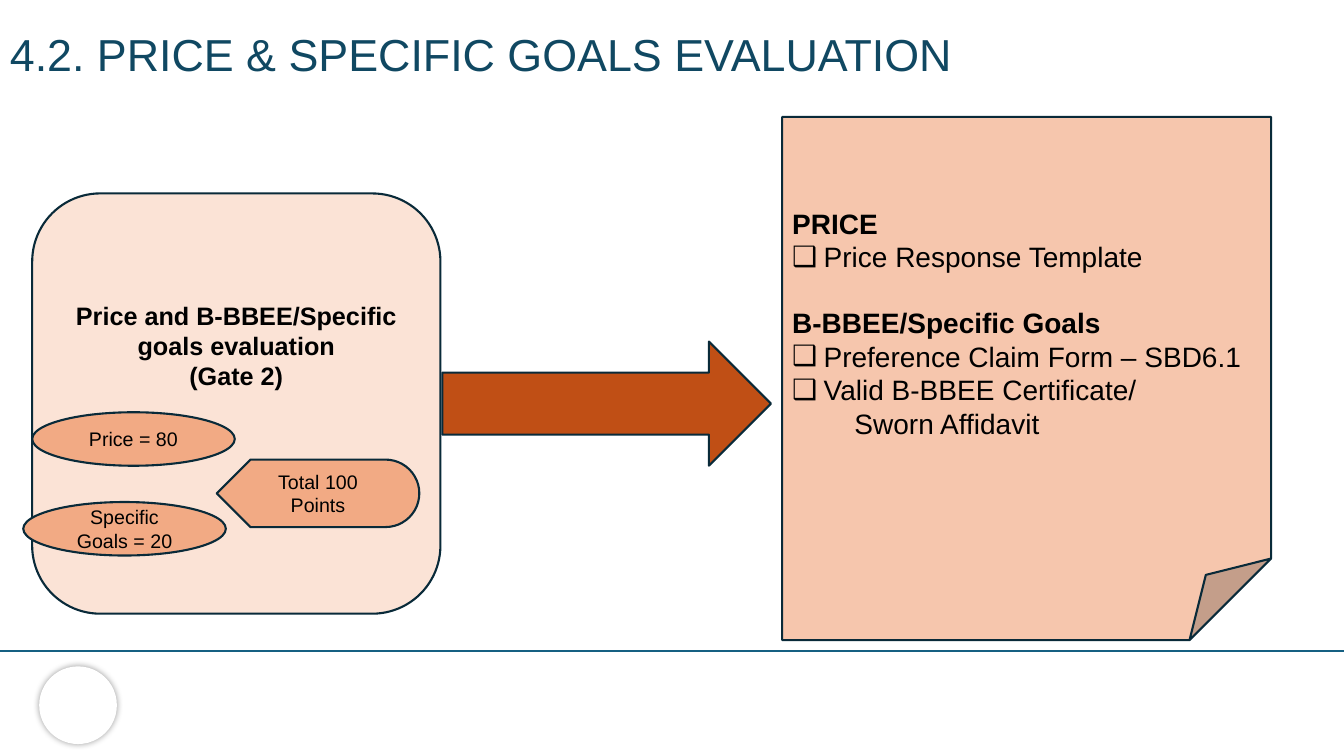
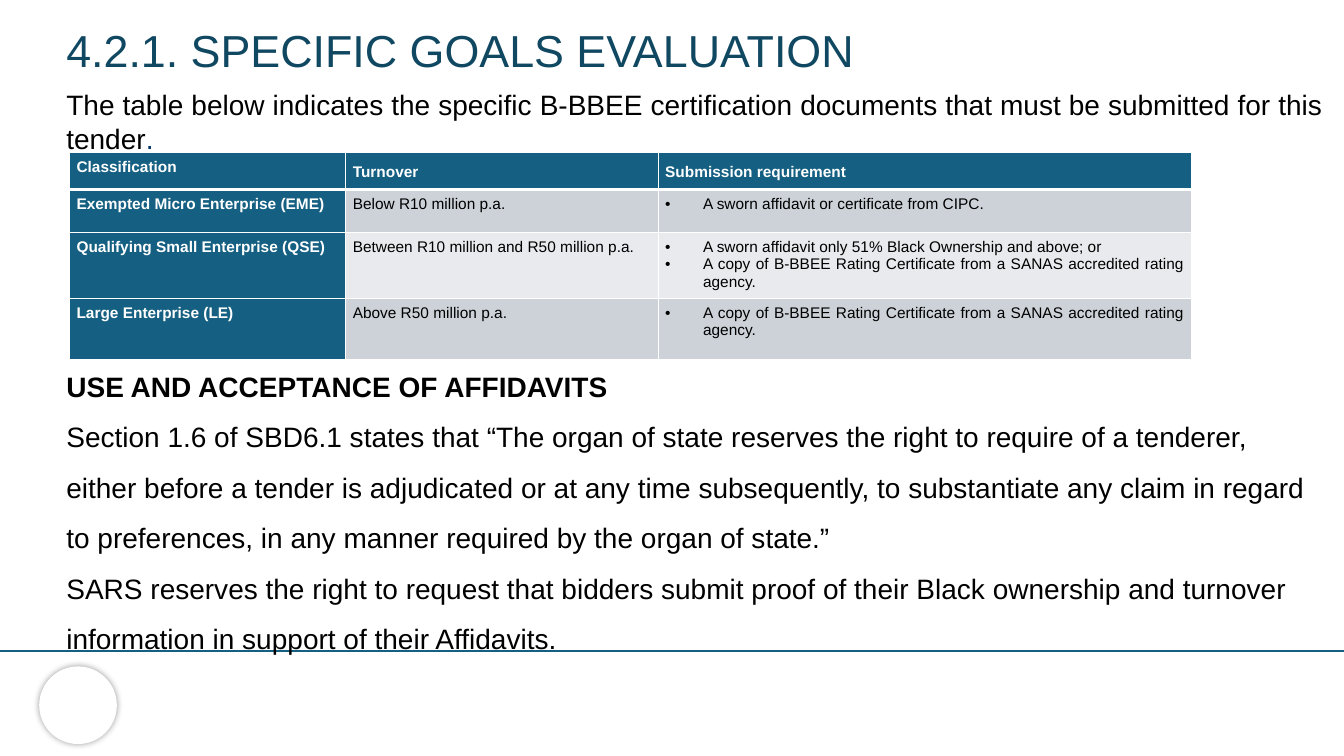
"""Build two slides on price and specific goals evaluation."""
from lxml import etree
from pptx import Presentation
from pptx.dml.color import RGBColor
from pptx.enum import shapes, text
from pptx.oxml import ns
from pptx.util import Pt

BLACK, WHITE = RGBColor(0, 0, 0), RGBColor(255, 255, 255)
TEAL, TITLE = RGBColor(0x15, 0x60, 0x82), RGBColor(0x10, 0x48, 0x62)
EDGE, NAVY = RGBColor(0x09, 0x2A, 0x39), RGBColor(0, 0x33, 0x66)
PALE, PEACH = RGBColor(0xFB, 0xE3, 0xD6), RGBColor(0xF6, 0xC6, 0xAD)
SALMON, RUST = RGBColor(0xF2, 0xAA, 0x84), RGBColor(0xC0, 0x4F, 0x15)
BANDS = RGBColor(0xCC, 0xD2, 0xD8), RGBColor(0xE8, 0xEA, 0xED)

KIND = shapes.MSO_SHAPE
MID, TOP = text.MSO_ANCHOR.MIDDLE, text.MSO_ANCHOR.TOP
LEFT, CENTER, JUSTIFY = text.PP_ALIGN.LEFT, text.PP_ALIGN.CENTER, text.PP_ALIGN.JUSTIFY
PAD = (7.2, 3.6, 7.2, 3.6)

BOX = dict(bullet="❑", left=22.5, hang=22.5)
DOT = dict(bullet="•", left=27, hang=27)
BOLD = dict(bold=True)

GATE = ["Price and B-BBEE/Specific goals evaluation", "(Gate 2)"]
NEEDS = [
    ("PRICE", BOLD),
    ("Price Response Template", BOX),
    ("B-BBEE/Specific Goals", dict(bold=True, before=23)),
    ("Preference Claim Form – SBD6.1", BOX),
    ("Valid B-BBEE Certificate/", BOX),
    ("Sworn Affidavit", dict(left=44.5)),
]
POINTS = [
    (KIND.OVAL, (23, 294.5, 144.7, 38.2), ["Price = 80"]),
    (KIND.OVAL, (16.6, 358.6, 144.7, 38.2), ["Specific Goals = 20"]),
    (KIND.FLOWCHART_DISPLAY, (154.8, 328.3, 144.7, 48.2), ["Total 100", "Points"]),
]

INTRO = [("The table below indicates the specific B-BBEE certification documents "
          "that must be submitted for this tender", dict(tail=(".", NAVY)))]
RATING = "A copy of B-BBEE Rating Certificate from a SANAS accredited rating agency."
HEADS = ["Classification", "Turnover", "Submission requirement"]
ROWS = [
    ("Exempted Micro Enterprise (EME)", "Below R10 million p.a.",
     ["A sworn affidavit or certificate from CIPC."]),
    ("Qualifying Small Enterprise (QSE)", "Between R10 million and R50 million p.a.",
     ["A sworn affidavit only 51% Black Ownership and above; or", RATING]),
    ("Large Enterprise (LE)", "Above R50 million p.a.", [RATING]),
]
WIDTHS, HEIGHTS = (197.3, 223.2, 380.9), (26.6, 31, 46.8, 43.9)
BODY = [
    ("USE AND ACCEPTANCE OF AFFIDAVITS", BOLD),
    "Section 1.6 of SBD6.1 states that “The organ of state reserves the right to "
    "require of a tenderer, either before a tender is adjudicated or at any time "
    "subsequently, to substantiate any claim in regard to preferences, in any "
    "manner required by the organ of state.”",
    "SARS reserves the right to request that bidders submit proof of their Black "
    "ownership and turnover information in support of their Affidavits.",
]


def sub(parent, tag, **attrs):
    return etree.SubElement(parent, ns.qn(tag), attrs)


def style(font, size, color, bold):
    font.name, font.size, font.bold = "Arial", Pt(size), bold
    font.color.rgb = color


def para(p, words, size=20, color=BLACK, bold=False, align=LEFT, bullet=None,
         left=0, hang=0, before=0, spacing=None, tail=None):
    props = p._p.get_or_add_pPr()
    if left:
        props.set("marL", str(Pt(left)))
        props.set("indent", str(-Pt(hang)))
    if bullet:
        sub(props, "a:buFont", typeface="Arial")
        sub(props, "a:buChar", char=bullet)
    p.alignment = align
    if before:
        p.space_before = Pt(before)
    if spacing:
        p.line_spacing = spacing
    for part, tint in [(words, color)] + ([tail] if tail else []):
        run = p.add_run()
        run.text = part
        style(run.font, size, tint, bold)


def write(frame, items, pad=PAD, anchor=TOP, **fmt):
    frame.word_wrap = True
    frame.vertical_anchor = anchor
    (frame.margin_left, frame.margin_top,
     frame.margin_right, frame.margin_bottom) = map(Pt, pad)
    for i, item in enumerate(items):
        words, extra = (item, {}) if isinstance(item, str) else item
        p = frame.add_paragraph() if i else frame.paragraphs[0]
        para(p, words, **{**fmt, **extra})


def label(slide, box, items, **fmt):
    write(slide.shapes.add_textbox(*map(Pt, box)).text_frame, items, **fmt)


def shape(slide, kind, box, fill, items=(), edge=EDGE, **fmt):
    item = slide.shapes.add_shape(kind, *map(Pt, box))
    item.shadow.inherit = False
    item.fill.solid()
    item.fill.fore_color.rgb = fill
    if edge is None:
        item.line.fill.background()
    else:
        item.line.color.rgb, item.line.width = edge, Pt(1.5)
    if items:
        write(item.text_frame, items, anchor=MID, **fmt)
    return item


def start(deck, title, box):
    slide = deck.slides.add_slide(deck.slide_layouts[6])
    rule = slide.shapes.add_connector(
        shapes.MSO_CONNECTOR.STRAIGHT, Pt(960), Pt(465), Pt(0), Pt(465))
    rule.line.color.rgb, rule.line.width = TEAL, Pt(1.5)
    sub(rule._element.spPr, "a:effectLst")
    disc = shape(slide, KIND.OVAL, (28, 476, 55.5, 55.5), WHITE, edge=None)
    glow = sub(disc._element.spPr.find(ns.qn("a:effectLst")), "a:outerShdw",
               blurRad=str(Pt(5)), dist="0", dir="0", algn="ctr", rotWithShape="0")
    sub(sub(glow, "a:srgbClr", val="000000"), "a:alpha", val="40000")
    label(slide, box, [title], size=32, color=TITLE)
    return slide


def border(cell, bottom):
    props = cell._tc.get_or_add_tcPr()
    for i, side in enumerate("LRTB"):
        width = bottom if side == "B" else 1
        line = etree.Element(ns.qn("a:ln" + side), w=str(Pt(width)))
        sub(sub(line, "a:solidFill"), "a:srgbClr", val=str(WHITE))
        props.insert(i, line)


def grid(slide):
    box = map(Pt, (49.7, 108.7, sum(WIDTHS), sum(HEIGHTS)))
    table = slide.shapes.add_table(len(HEIGHTS), len(WIDTHS), *box).table
    for col, width in zip(table.columns, WIDTHS):
        col.width = Pt(width)
    for row, height in zip(table.rows, HEIGHTS):
        row.height = Pt(height)
    for r, row in enumerate([HEADS] + ROWS):
        for c, value in enumerate(row):
            cell, head = table.cell(r, c), r == 0 or c == 0
            cell.fill.solid()
            cell.fill.fore_color.rgb = TEAL if head else BANDS[(r - 1) % 2]
            items = [value] if isinstance(value, str) else [(v, DOT) for v in value]
            write(cell.text_frame, items, size=11, bold=head, align=JUSTIFY,
                  color=WHITE if head else BLACK)
            cell.vertical_anchor = MID if r == 0 and c else TOP
            (cell.margin_left, cell.margin_top,
             cell.margin_right, cell.margin_bottom) = map(Pt, (5, 4.3, 5, 2.9))
            border(cell, 1 if r else 3)


def main():
    deck = Presentation()
    deck.slide_width, deck.slide_height = Pt(960), Pt(540)

    flow = start(deck, "4.2. PRICE & SPECIFIC GOALS EVALUATION", (0, 15.8, 828, 47.5))
    shape(flow, KIND.ROUNDED_RECTANGLE, (23, 138.2, 291.6, 300.2), PALE, GATE,
          pad=(7.2, 3.6, 7.2, 86.4), size=18, bold=True, align=CENTER)
    for kind, box, items in POINTS:
        shape(flow, kind, box, SALMON, items, size=14, align=CENTER)
    shape(flow, KIND.FOLDED_CORNER, (558.7, 83.5, 349.2, 373.7), PEACH, NEEDS,
          pad=(7.2, 3.6, 7.2, 24.3))
    shape(flow, KIND.RIGHT_ARROW, (316, 244, 234.7, 88.6), RUST)

    goals = start(deck, "4.2.1. SPECIFIC GOALS EVALUATION", (40.3, 13, 596, 46))
    grid(goals)
    label(goals, (40.3, 59, 912.2, 55.4), INTRO, align=JUSTIFY)
    label(goals, (40.3, 248.4, 912.2, 269.3), BODY, spacing=1.5)
    deck.save("out.pptx")


if __name__ == "__main__":
    main()
